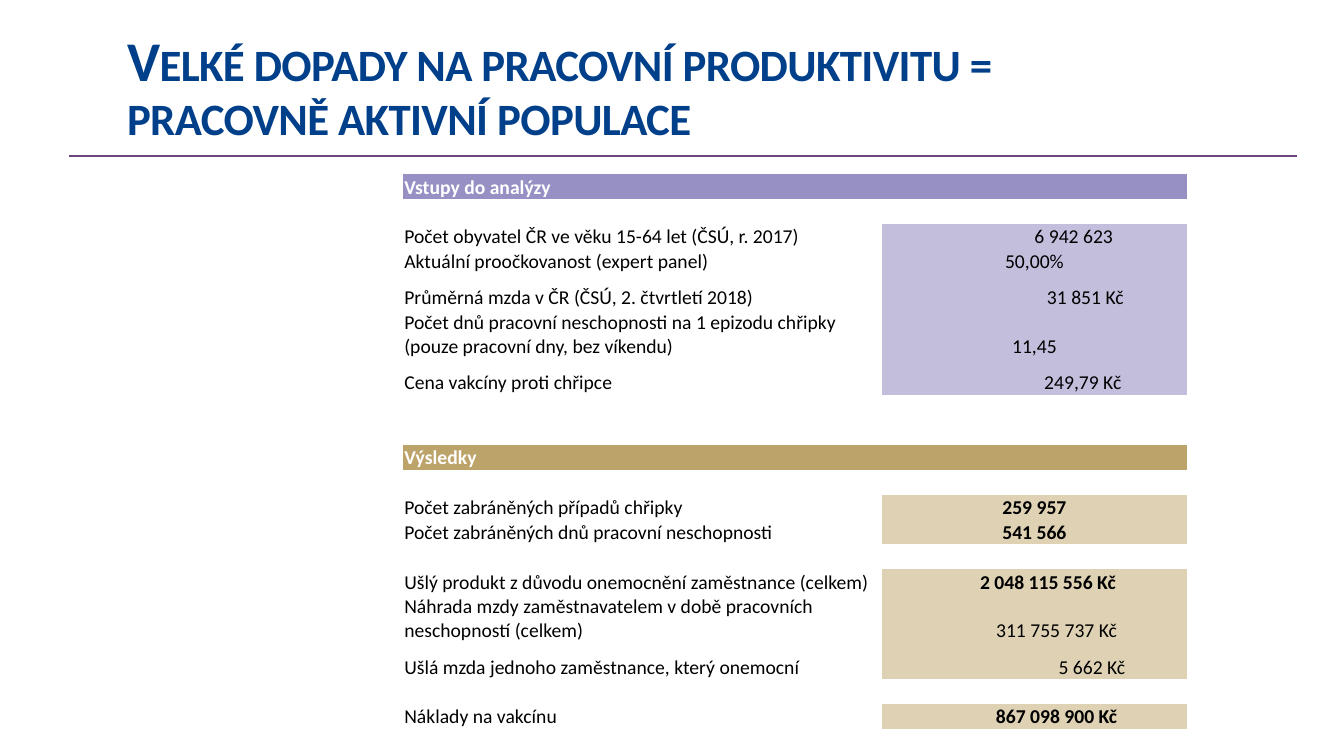
from lxml import etree
from pptx import Presentation
from pptx.dml.color import RGBColor
from pptx.enum.shapes import MSO_CONNECTOR
from pptx.enum.text import MSO_ANCHOR, PP_ALIGN
from pptx.oxml.ns import qn
from pptx.util import Inches, Pt

BOTTOM = MSO_ANCHOR.BOTTOM
LEFT, CENTER = PP_ALIGN.LEFT, PP_ALIGN.CENTER
STRAIGHT = MSO_CONNECTOR.STRAIGHT

FONT = "Calibri"
SIZE = 14
PLAIN = "{2D5ABB26-0587-4C30-8999-92F81FD0307C}"
COLORS = {
    "title": "003F8A", "rule": "6B4481", "text": "000000", "white": "FFFFFF",
    "violet": "9690C4", "lilac": "C2BEDC", "gold": "BCA36A", "sand": "DED1B4",
}
LOW, TALL, DOUBLE = 0.24, 0.36, 0.47

# Each row: height, label, value, indent of the value, bold value
GAP = (LOW, "", "", 0, False)
INPUTS = [
    GAP,
    (LOW, "Počet obyvatel ČR ve věku 15-64 let (ČSÚ, r. 2017)", "6 942 623", 0.78, False),
    (LOW, "Aktuální proočkovanost (expert panel)", "50,00%", 0, False),
    (TALL, "Průměrná mzda v ČR (ČSÚ, 2. čtvrtletí 2018)", "31 851 Kč", 1.01, False),
    (DOUBLE, "Počet dnů pracovní neschopnosti na 1 epizodu chřipky "
     "(pouze pracovní dny, bez víkendu)", "11,45", 0, False),
    (TALL, "Cena vakcíny proti chřipce", "249,79 Kč", 0.96, False),
    GAP,
    GAP,
]
RESULTS = [
    GAP,
    (LOW, "Počet zabráněných případů chřipky", "259 957", 0, True),
    (LOW, "Počet zabráněných dnů pracovní neschopnosti", "541 566", 0, True),
    GAP,
    (LOW, "Ušlý produkt z důvodu onemocnění zaměstnance (celkem)",
     "2 048 115 556 Kč", 0.27, True),
    (DOUBLE, "Náhrada mzdy zaměstnavatelem v době pracovních neschopností (celkem)",
     "311 755 737 Kč", 0.44, False),
    (TALL, "Ušlá mzda jednoho zaměstnance, který onemocní", "5 662 Kč", 1.14, False),
    GAP,
    (LOW, "Náklady na vakcínu", "867 098 900 Kč", 0.44, True),
]
PARTS = [
    ("Vstupy do analýzy", "violet", "lilac", INPUTS),
    ("Výsledky", "gold", "sand", RESULTS),
]


def color(name):
    return RGBColor.from_string(COLORS[name])


def add_run(para, text, size, tint, bold):
    run = para.add_run()
    run.text = text
    font = run.font
    font.name, font.size, font.bold = FONT, Pt(size), bold
    font.color.rgb = color(tint)
    return run


def add_title(slide, left, top, width, height):
    title = slide.shapes.title
    title.left, title.top = Inches(left), Inches(top)
    title.width, title.height = Inches(width), Inches(height)
    frame = title.text_frame
    frame.word_wrap = True
    frame.vertical_anchor = BOTTOM
    frame.margin_left = frame.margin_right = 0
    frame.margin_top = frame.margin_bottom = 0
    para = frame.paragraphs[0]
    para.alignment = LEFT
    para.line_spacing = 0.8
    run = add_run(para, "Velké dopady na pracovní produktivitu = "
                  "pracovně aktivní populace", 40, "title", True)
    # Small caps and tight spacing
    props = run.font._element
    props.set("cap", "small")
    props.set("spc", "-40")


def add_rule(slide, left, top, width):
    rule = slide.shapes.add_connector(
        STRAIGHT, Inches(left), Inches(top), Inches(left + width), Inches(top))
    rule.line.color.rgb = color("rule")
    rule.line.width = Pt(1.5)
    etree.SubElement(rule._element.spPr, qn("a:effectLst"))


def fill_cell(cell, text, tint="text", bold=False, back=None, align=LEFT, indent=0):
    cell.vertical_anchor = BOTTOM
    cell.margin_left = Inches(0.01 + indent)
    cell.margin_right = cell.margin_top = Inches(0.01)
    cell.margin_bottom = 0
    if back:
        cell.fill.solid()
        cell.fill.fore_color.rgb = color(back)
    else:
        cell.fill.background()
    para = cell.text_frame.paragraphs[0]
    para.alignment = align
    if text:
        add_run(para, text, SIZE, tint, bold)
    else:
        # Keeps an empty row as low as a line of text
        etree.SubElement(para._p, qn("a:endParaRPr"), sz=str(SIZE * 100))


def add_data(slide, left, top, widths):
    heights = [h for part in PARTS for h in [LOW] + [row[0] for row in part[3]]]
    table = slide.shapes.add_table(
        len(heights), len(widths), Inches(left), Inches(top),
        Inches(sum(widths)), Inches(sum(heights))).table
    table.first_row = table.horz_banding = False
    table._tbl.tblPr.find(qn("a:tableStyleId")).text = PLAIN
    for col, width in zip(table.columns, widths):
        col.width = Inches(width)
    for row, height in zip(table.rows, heights):
        row.height = Inches(height)

    lines = iter(table.rows)
    for head, dark, light, rows in PARTS:
        # Section header
        name, rest = next(lines).cells
        fill_cell(name, head, "white", True, dark)
        fill_cell(rest, "", back=dark)
        # Section rows
        for _, label, value, indent, bold in rows:
            name, amount = next(lines).cells
            fill_cell(name, label)
            fill_cell(amount, value, bold=bold, back=light if value else None,
                      align=CENTER, indent=indent)


def main():
    deck = Presentation()
    deck.slide_width, deck.slide_height = Inches(13.33), Inches(7.5)
    slide = deck.slides.add_slide(deck.slide_layouts.get_by_name("Title Only"))
    add_rule(slide, 0.68, 1.55, 12.18)
    add_title(slide, 1.26, 0, 10.11, 1.45)
    add_data(slide, 4, 1.73, [4.75, 3.02])
    deck.save("out.pptx")


if __name__ == "__main__":
    main()
